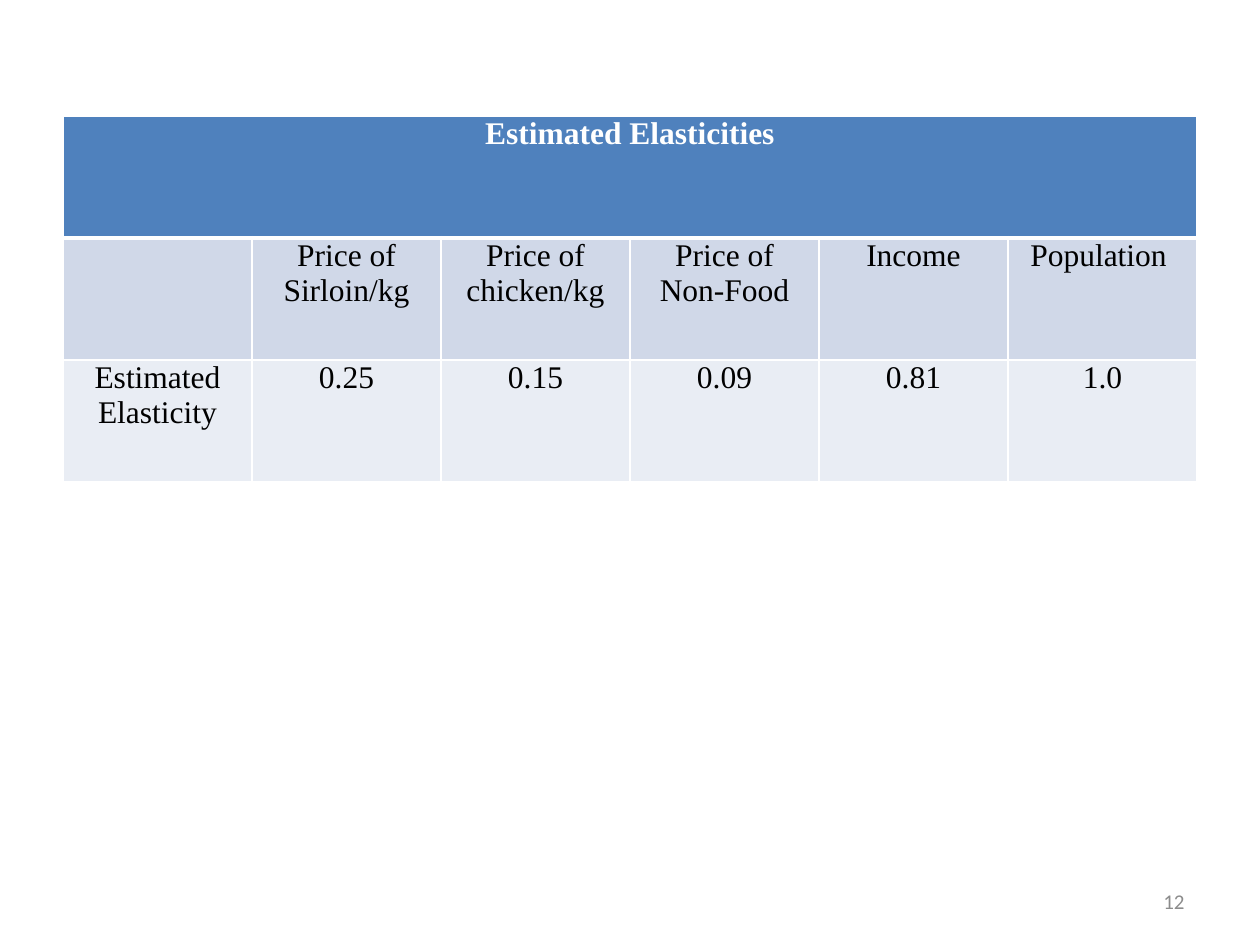
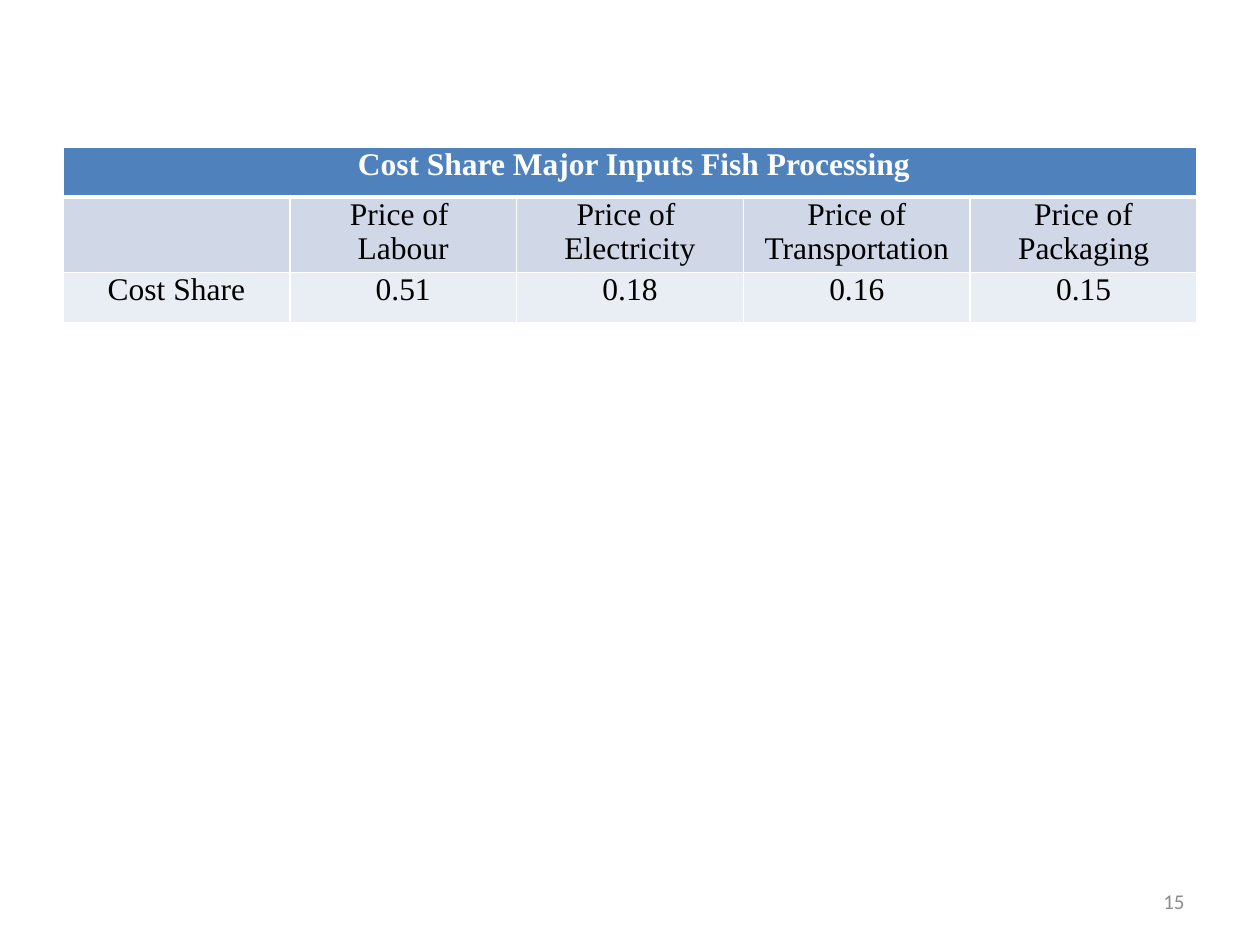
"""Build two slides, each with a banded economics table and a slide number."""
from lxml.etree import SubElement
from pptx import Presentation
from pptx.dml.color import RGBColor
from pptx.enum.text import MSO_ANCHOR, PP_ALIGN
from pptx.oxml.ns import qn
from pptx.util import Cm, Pt

COLORS = {
    "header": "4F81BD",
    "labels": "D0D8E8",
    "values": "E9EDF4",
    "white": "FFFFFF",
    "black": "000000",
    "number": "8C8C8C",
}
BANDS = ["header", "labels", "values"]
HEADER_FONT = {"name": "Times New Roman", "size": Pt(18), "bold": True}
BODY_FONT = {**HEADER_FONT, "bold": False}
NUMBER_FONT = {"name": "Calibri", "size": Pt(12)}
CELL_FORMAT = {"margin_left": Cm(0.18), "margin_right": Cm(0.18),
               "margin_top": 0, "margin_bottom": 0}
LEFT, WIDTH = 1.27, 22.86

SLIDES = [
    {
        "number": "12",
        "top": 2.34,
        "heights": [2.46, 2.46, 2.46],
        "title": "Estimated Elasticities",
        "labels": ["", "Price of Sirloin/kg", "Price of chicken/kg",
                   "Price of Non-Food", "Income", "Population "],
        "values": ["Estimated Elasticity", "0.25", "0.15", "0.09", "0.81", "1.0"],
    },
    {
        "number": "15",
        "top": 2.97,
        "heights": [1, 1.42, 1.02],
        "title": " Cost Share Major Inputs Fish Processing",
        "labels": ["", "Price of \nLabour", "Price of \nElectricity",
                   "Price of Transportation", "Price of Packaging"],
        "values": ["Cost Share", "0.51", "0.18", "0.16", "0.15"],
    },
]


def style_text(tf, align, color, font):
    for p in tf.paragraphs:
        p.alignment = align
        for name, value in font.items():
            setattr(p.font, name, value)
        p.font.color.rgb = RGBColor.from_string(COLORS[color])
        for r in p.runs:
            for name, value in font.items():
                setattr(r.font, name, value)
            r.font.color.rgb = RGBColor.from_string(COLORS[color])


def set_borders(cell, widths):
    tcPr = cell._tc.get_or_add_tcPr()
    for side, width in widths.items():
        ln = SubElement(tcPr, qn(f"a:ln{side}"), w=str(Pt(width)))
        fill = SubElement(ln, qn("a:solidFill"))
        SubElement(fill, qn("a:srgbClr"), val=COLORS["white"])


prs = Presentation()
prs.slide_width, prs.slide_height = Cm(25.4), Cm(19.05)

for data in SLIDES:
    s = prs.slides.add_slide(prs.slide_layouts[6])
    n = len(data["labels"])
    rows = [[data["title"]] + [""] * (n - 1), data["labels"], data["values"]]

    tbl = s.shapes.add_table(len(rows), n, Cm(LEFT), Cm(data["top"]),
                             Cm(WIDTH), Cm(sum(data["heights"]))).table
    tbl.horz_banding = False
    for col in tbl.columns:
        col.width = Cm(WIDTH / n)
    for i, (texts, band, height) in enumerate(zip(rows, BANDS, data["heights"])):
        tbl.rows[i].height = Cm(height)
        for j, text in enumerate(texts):
            cell = tbl.cell(i, j)
            cell.text = text
            for name, value in CELL_FORMAT.items():
                setattr(cell, name, value)
            set_borders(cell, {"L": 1, "R": 1, "T": 3 if i == 1 else 1,
                               "B": 3 if i == 0 else 1})
            cell.fill.solid()
            cell.fill.fore_color.rgb = RGBColor.from_string(COLORS[band])
            style_text(cell.text_frame, PP_ALIGN.CENTER,
                       "white" if i == 0 else "black",
                       HEADER_FONT if i == 0 else BODY_FONT)
    tbl.cell(0, 0).merge(tbl.cell(0, n - 1))

    sp = s.shapes.add_textbox(Cm(18.2), Cm(17.66), Cm(5.93), Cm(1.01))
    tf = sp.text_frame
    tf.word_wrap = True
    tf.vertical_anchor = MSO_ANCHOR.MIDDLE
    tf.text = data["number"]
    style_text(tf, PP_ALIGN.RIGHT, "number", NUMBER_FONT)

prs.save("out.pptx")
